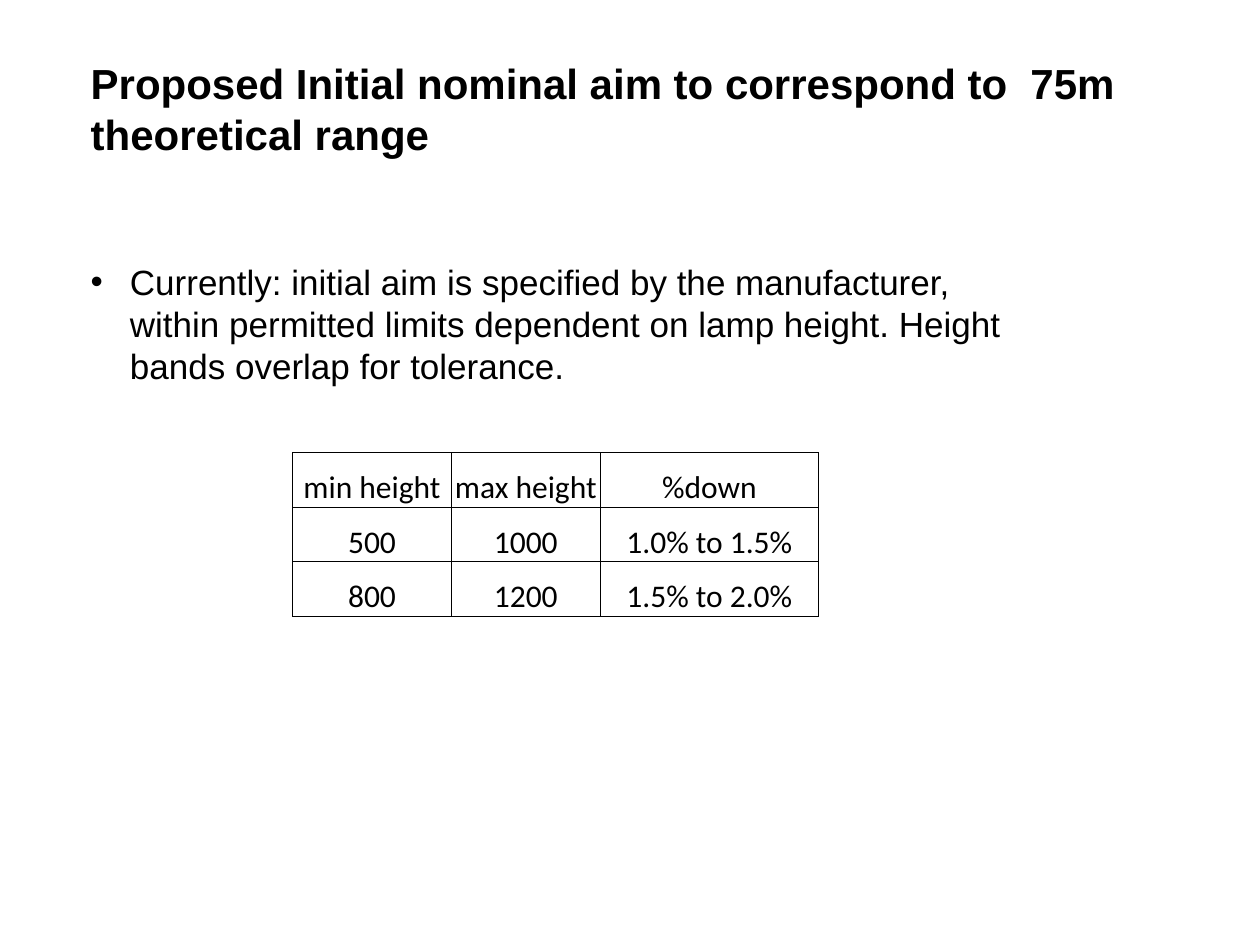
from lxml import etree
from pptx import Presentation
from pptx.dml.color import RGBColor
from pptx.enum.text import MSO_ANCHOR, MSO_AUTO_SIZE, PP_ALIGN
from pptx.oxml.ns import qn
from pptx.util import Cm, Pt

BOTTOM = MSO_ANCHOR.BOTTOM
CENTER = PP_ALIGN.CENTER
GROW = MSO_AUTO_SIZE.SHAPE_TO_FIT_TEXT
BLACK = "000000"
BORDER_SIDES = ("a:lnL", "a:lnR", "a:lnT", "a:lnB")

TITLE = "Proposed Initial nominal aim to correspond to  75m theoretical range"
CURRENT_RULE = (
    "Currently: initial aim is specified by the manufacturer, within permitted "
    "limits dependent on lamp height. Height bands overlap for tolerance."
)
AIM_LIMITS = [
    ("min height", "max height", "%down"),
    ("500", "1000", "1.0% to 1.5%"),
    ("800", "1200", "1.5% to 2.0%"),
]


def color(value):
    return RGBColor.from_string(value)


def style_text(p, font, size, bold=False):
    for r in p.runs:
        r.font.name = font
        r.font.size = Pt(size)
        r.font.bold = bold
        r.font.color.rgb = color(BLACK)


def add_text(s, box, text, size, bold=False):
    tf = s.shapes.add_textbox(*map(Cm, box)).text_frame
    tf.word_wrap = True
    tf.auto_size = GROW
    tf.text = text
    p = tf.paragraphs[0]
    style_text(p, "Arial", size, bold)
    return p


def add_bullet(p, indent):
    pPr = p._p.get_or_add_pPr()
    pPr.set("marL", str(Cm(indent)))
    pPr.set("indent", str(-Cm(indent)))
    etree.SubElement(pPr, qn("a:buFont")).set("typeface", "Arial")
    etree.SubElement(pPr, qn("a:buChar")).set("char", "•")


def add_borders(cell, width):
    tcPr = cell._tc.get_or_add_tcPr()
    for i, side in enumerate(BORDER_SIDES):
        ln = etree.Element(qn(side), w=str(Pt(width)))
        fill = etree.SubElement(ln, qn("a:solidFill"))
        etree.SubElement(fill, qn("a:srgbClr")).set("val", BLACK)
        tcPr.insert(i, ln)


def add_limits_table(s, left, top, widths, row_height):
    size = (sum(widths), row_height * len(AIM_LIMITS))
    table = s.shapes.add_table(
        len(AIM_LIMITS), len(widths), *map(Cm, (left, top, *size))
    ).table
    table.first_row = False
    table.horz_banding = False
    for column, width in zip(table.columns, widths):
        column.width = Cm(width)
    for row, values in zip(table.rows, AIM_LIMITS):
        row.height = Cm(row_height)
        for cell, value in zip(row.cells, values):
            cell.text = value
            cell.vertical_anchor = BOTTOM
            cell.margin_left = cell.margin_right = 0
            cell.margin_top = cell.margin_bottom = 0
            cell.fill.background()
            add_borders(cell, 0.5)
            p = cell.text_frame.paragraphs[0]
            p.alignment = CENTER
            style_text(p, "Calibri", 18)


def main():
    prs = Presentation()
    prs.slide_width, prs.slide_height = Cm(25.4), Cm(19.05)
    s = prs.slides.add_slide(prs.slide_layouts[6])
    add_text(s, (1.58, 1.04, 21.8, 2.3), TITLE, 24, bold=True)
    rule = add_text(s, (1.58, 5.13, 19.8, 3.58), CURRENT_RULE, 20)
    add_bullet(rule, 0.79)
    add_limits_table(s, 5.9, 9.12, (3.2, 3, 4.4), 1.1)
    prs.save("out.pptx")


if __name__ == "__main__":
    main()
